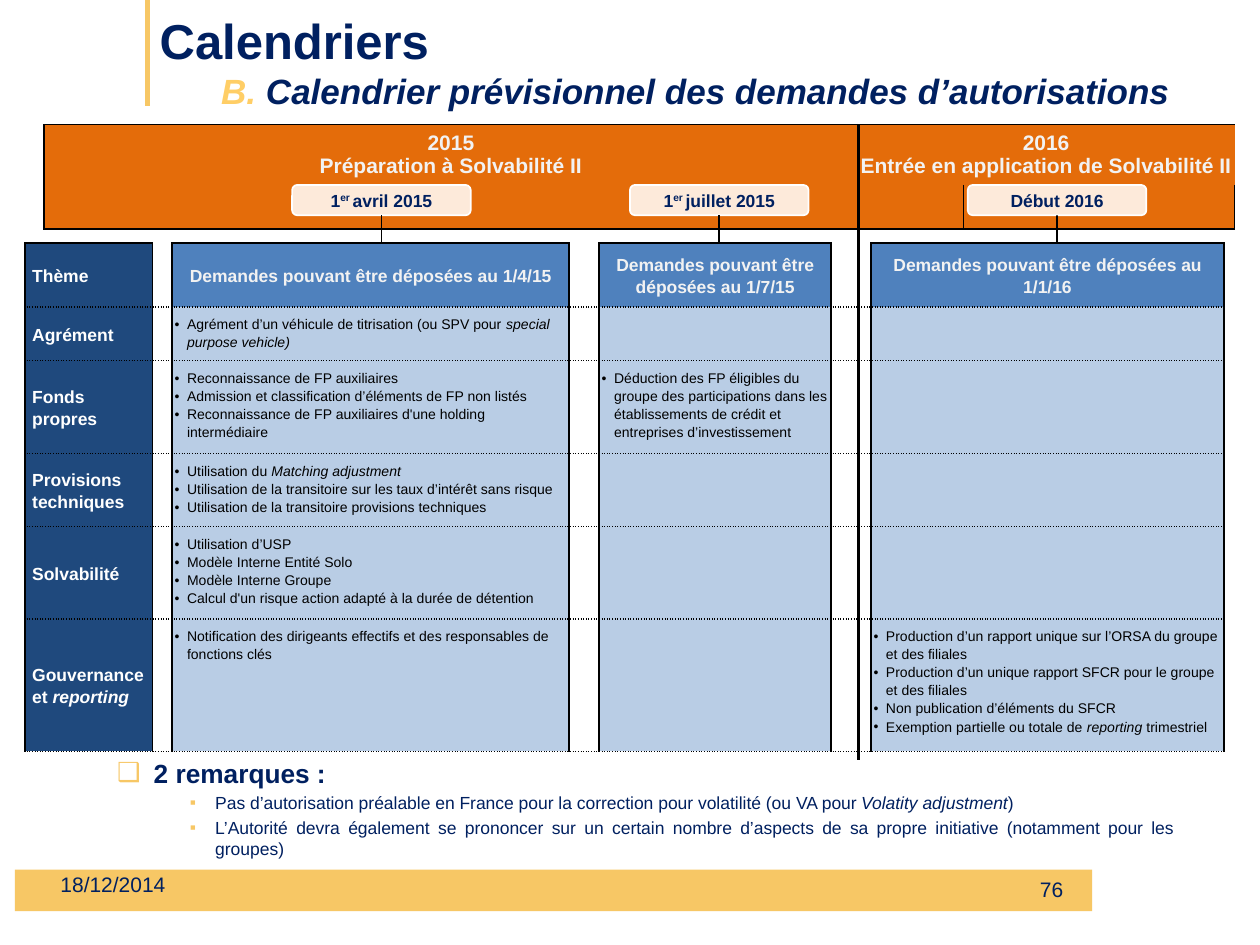
from itertools import accumulate
from lxml.etree import SubElement as Sub
from pptx import Presentation
from pptx.dml.color import RGBColor as Rgb
from pptx.enum.shapes import MSO_CONNECTOR as Conn, MSO_SHAPE as Shape
from pptx.enum.text import MSO_ANCHOR as Anchor, PP_ALIGN as Align
from pptx.oxml.ns import qn
from pptx.util import Cm, Pt

INK = {"navy": "002060", "gold": "F7C765", "sun": "FFCE66", "orange": "E46C0A",
       "peach": "FDEADA", "dark": "1F497D", "blue": "4F81BD", "pale": "B9CDE5",
       "black": "000000", "white": "FFFFFF", "grey": "F2F2F2"}
PLAIN = "{2D5ABB26-0587-4C30-8999-92F81FD0307C}"
SOLID, DOT = "solid", "sysDot"

HEADS = ["Thème", "Demandes pouvant être déposées au 1/4/15",
         "Demandes pouvant être déposées au 1/7/15",
         "Demandes pouvant être déposées au 1/1/16"]
THEMES = [
    (["Agrément"],
     ["Agrément d’un véhicule de titrisation (ou SPV pour *special purpose vehicle)*"], [], []),
    (["Fonds propres"],
     ["Reconnaissance de FP auxiliaires",
      "Admission et classification d’éléments de FP non listés",
      "Reconnaissance de FP auxiliaires d'une holding intermédiaire"],
     ["Déduction des FP éligibles du groupe des participations dans les "
      "établissements de crédit et entreprises d’investissement"], []),
    (["Provisions techniques"],
     ["Utilisation du *Matching adjustment*",
      "Utilisation de la transitoire sur les taux d’intérêt sans risque",
      "Utilisation de la transitoire provisions techniques"], [], []),
    (["Solvabilité"],
     ["Utilisation d’USP", "Modèle Interne Entité Solo", "Modèle Interne Groupe",
      "Calcul d'un risque action adapté à la durée de détention"], [], []),
    (["Gouvernance", "et *reporting*"],
     ["Notification des dirigeants effectifs et des responsables de fonctions clés"], [],
     ["Production d’un rapport unique sur l’ORSA du groupe et des filiales",
      "Production d’un unique rapport SFCR pour le groupe et des filiales",
      "Non publication d’éléments du SFCR",
      "Exemption partielle ou totale de* reporting *trimestriel"]),
]


def tint(name):
    return Rgb.from_string(INK[name])


def write(par, text, size, ink, bold=False, slant=False, lift=0):
    for n, part in enumerate(text.split("*")):
        if not part:
            continue
        run = par.add_run()
        run.text = part
        font = run.font
        font.name, font.size, font.bold = "Arial", Pt(size), bold
        font.italic = slant or n % 2 == 1
        font.color.rgb = tint(ink)
        if lift:
            run._r.get_or_add_rPr().set("baseline", str(lift))


def lines(frame, texts, *style, align=Align.LEFT, space=None, mark=None):
    for n, text in enumerate(texts):
        par = frame.paragraphs[0] if n == 0 else frame.add_paragraph()
        par.alignment = align
        par.line_spacing = space
        if mark:
            bullet(par, mark, 0.25, 0.25)
        write(par, text, *style)


def bullet(par, mark, left, hang, ink=None):
    props = par._p.get_or_add_pPr()
    props.set("marL", str(Cm(left)))
    props.set("indent", str(-Cm(hang)))
    if ink:
        Sub(Sub(props, qn("a:buClr")), qn("a:srgbClr"), val=INK[ink])
    if mark:
        Sub(props, qn("a:buFont"), typeface="Arial")
        Sub(props, qn("a:buChar"), char=mark)


def text_box(slide, box, anchor=Anchor.MIDDLE):
    frame = slide.shapes.add_textbox(*map(Cm, box)).text_frame
    frame.word_wrap = True
    frame.vertical_anchor = anchor
    return frame


def solid(slide, kind, box, fill, edge=None):
    shape = slide.shapes.add_shape(kind, *map(Cm, box))
    shape.shadow.inherit = False
    shape.fill.solid()
    shape.fill.fore_color.rgb = tint(fill)
    if edge:
        shape.line.color.rgb = tint(edge)
        shape.line.width = Pt(1)
    else:
        shape.line.fill.background()
    return shape


def stroke(slide, x, top, end, ink="black", width=1.0):
    line = slide.shapes.add_connector(Conn.STRAIGHT, Cm(x), Cm(top), Cm(x), Cm(end))
    line.line.color.rgb = tint(ink)
    line.line.width = Pt(width)
    Sub(line._element.spPr, qn("a:effectLst"))
    return line


def grid(slide, left, top, cols, rows):
    table = slide.shapes.add_table(len(rows), len(cols), Cm(left), Cm(top),
                                   Cm(sum(cols)), Cm(sum(rows))).table
    table.first_row = table.horz_banding = False
    table._tbl.tblPr.find(qn("a:tableStyleId")).text = PLAIN
    for col, wide in zip(table.columns, cols):
        col.width = Cm(wide)
    for row, high in zip(table.rows, rows):
        row.height = Cm(high)
    return table


def dress(cell, fill, edges, side=0.05, tall=0.05):
    cell.margin_left = cell.margin_right = Cm(side)
    cell.margin_top = cell.margin_bottom = Cm(tall)
    props = cell._tc.get_or_add_tcPr()
    for key in "LRTB":
        if key in edges:
            line = Sub(props, qn("a:ln" + key), w=str(Pt(1)))
            Sub(Sub(line, qn("a:solidFill")), qn("a:srgbClr"), val=INK["black"])
            Sub(line, qn("a:prstDash"), val=edges[key])
    if fill:
        cell.fill.solid()
        cell.fill.fore_color.rgb = tint(fill)
    else:
        cell.fill.background()


def title(slide, left, top):
    stroke(slide, left, 0, top + 1.6, "gold", 2.75)
    frame = text_box(slide, (left, top, 21.92, 1.4))
    frame.margin_top = frame.margin_bottom = 0
    par = frame.paragraphs[0]
    bullet(par, None, 1.24, 1.24)
    write(par, "Calendriers", 28, "navy", True)
    par.add_line_break()
    write(par, "B. ", 20, "sun", True, True)
    write(par, "Calendrier prévisionnel des demandes d’autorisations", 20, "navy", True, True)


def years(slide, left, top):
    cols = [1.73] + [1.4] * 10 + [0.68, 2.13, 1.4, 1.4, 2.67]
    table = grid(slide, left, top, cols, [1.17, 0.89])
    spans = [(0, 11, ["2015", "Préparation à Solvabilité II"]),
             (12, 15, ["2016", "Entrée en application de Solvabilité II"])]
    for first, last, texts in spans:
        for col in range(first, last + 1):
            ends = {}
            if col == first:
                ends["L"] = SOLID
            if col == last:
                ends["R"] = SOLID
            dress(table.cell(0, col), "orange", {**ends, "T": SOLID}, 0.05, 0.1)
            dress(table.cell(1, col), "orange", {**ends, "B": SOLID})
        head = table.cell(0, first)
        head.merge(table.cell(0, last))
        head.vertical_anchor = Anchor.MIDDLE
        lines(head.text_frame, texts, 12, "grey", True, align=Align.CENTER)


def dates(slide, left, top):
    pills = []
    for n, (day, rest) in enumerate([("1", "avril 2015"), ("1", "juillet 2015"),
                                     ("", "Début 2016")]):
        pill = solid(slide, Shape.ROUNDED_RECTANGLE, (left + n * 6.81, top, 3.6, 0.61),
                     "peach", "white")
        frame = pill.text_frame
        frame.margin_top = frame.margin_bottom = 0
        frame.vertical_anchor = Anchor.MIDDLE
        par = frame.paragraphs[0]
        par.alignment = Align.CENTER
        if day:
            write(par, day, 10, "navy", True)
            write(par, "er ", 10, "navy", True, lift=30000)
        write(par, rest, 10, "navy", True)
        pills.append(pill)
    return pills


def themes(slide, left, top):
    table = grid(slide, left, top, [2.57, 0.4, 8, 0.61, 4.67, 0.81, 7.11],
                 [1.29, 1.07, 1.88, 1.47, 1.86, 2.67])
    for r, row in enumerate([[[head] for head in HEADS], *THEMES]):
        for c in range(7):
            cell = table.cell(r, c)
            edges = {"L": SOLID, "R": SOLID, "T": DOT if r else SOLID, "B": DOT}
            if c % 2:
                if r == 0:
                    del edges["T"]
                dress(cell, None, edges)
                continue
            texts = row[c // 2]
            side = 0.05 if c else 0.15
            fill = "dark" if c == 0 else "pale" if r else "blue"
            dress(cell, fill, edges, side, 0.15 if texts else 0.05)
            if r and c:
                lines(cell.text_frame, texts, 8, "black", space=1.15, mark="•")
                continue
            cell.vertical_anchor = Anchor.MIDDLE
            lines(cell.text_frame, texts, 10, "grey" if c else "white", True,
                  align=Align.CENTER if c else Align.LEFT, space=1.15)


def notes(slide, left, top):
    frame = text_box(slide, (left, top, 21.79, 2.2), Anchor.TOP)
    par = frame.paragraphs[0]
    bullet(par, "❑", 0.74, 0.74, "gold")
    write(par, "2 remarques :", 15, "navy", True)
    for text in ["Pas d’autorisation préalable en France pour la correction pour "
                 "volatilité (ou VA pour *Volatity adjustment*)",
                 "L’Autorité devra également se prononcer sur un certain nombre "
                 "d’aspects de sa propre initiative (notamment pour les groupes)"]:
        par = frame.add_paragraph()
        par.level = 1
        par.alignment = Align.JUSTIFY
        par.space_before = Pt(2)
        bullet(par, "▪", 1.98, 0.51, "gold")
        write(par, text, 10, "navy")


def footer(slide, left, top):
    solid(slide, Shape.RECTANGLE, (left, top, 21.72, 0.84), "gold")
    lines(text_box(slide, (left + 20.2, top, 1.4, 0.79)), ["76"], 12, "navy",
          align=Align.CENTER)
    lines(text_box(slide, (left + 0.67, top - 0.21, 5.92, 1.02)), ["18/12/2014"], 12, "navy")


def main():
    deck = Presentation()
    deck.slide_width, deck.slide_height = Cm(25.4), Cm(19.05)
    slide = deck.slides.add_slide(deck.slide_layouts[6])
    title(slide, 2.97, 0.53)
    years(slide, 0.89, 2.51)
    pills = dates(slide, 5.89, 3.73)
    themes(slide, 0.5, 4.9)
    for n, pill in enumerate(pills):
        stroke(slide, 7.69 + n * 6.81, 4.34, 4.9).begin_connect(pill, 2)
    notes(slide, 2.11, 15.14)
    stroke(slide, 17.3, 2.51, 15.32, width=1.5)
    footer(slide, 0.3, 17.53)
    deck.save("out.pptx")


if __name__ == "__main__":
    main()
